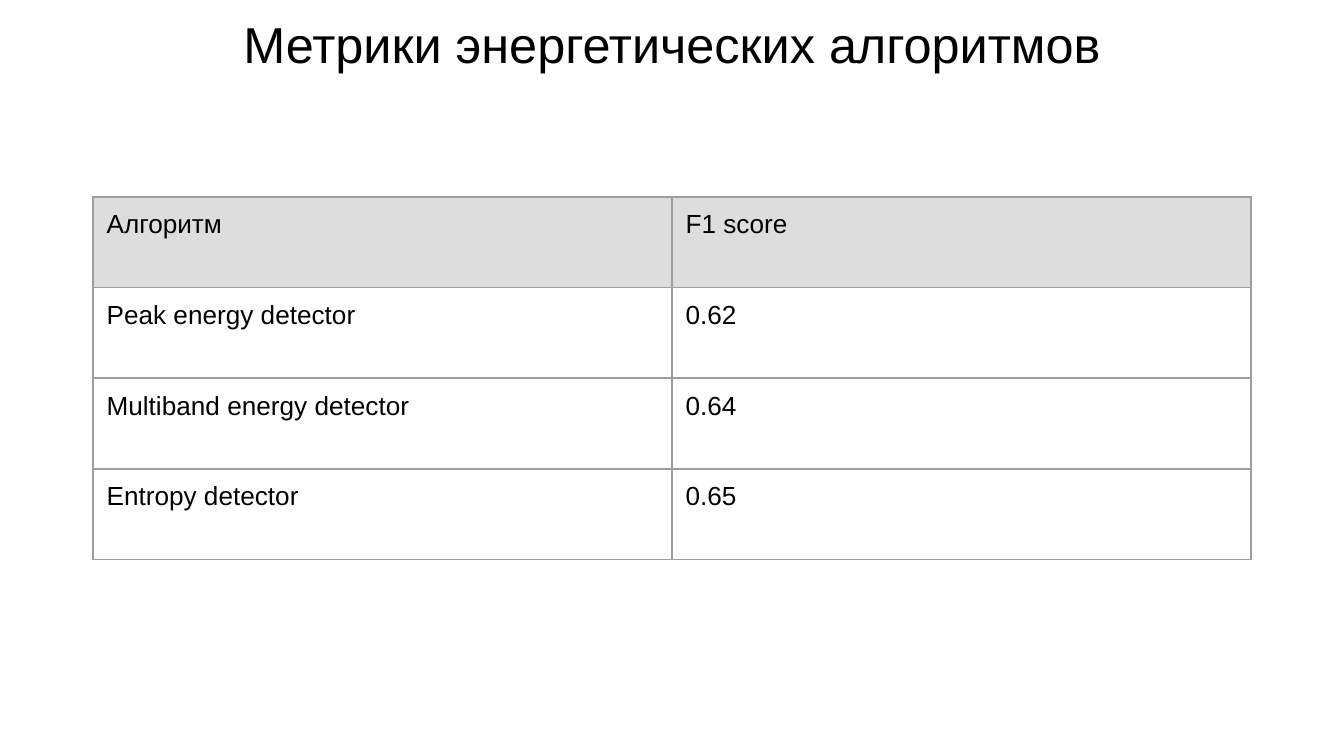
from pptx import Presentation
from pptx.dml.color import RGBColor
from pptx.enum.text import MSO_ANCHOR, PP_ALIGN
from pptx.oxml import parse_xml
from pptx.oxml.ns import nsdecls
from pptx.util import Pt

BLACK = RGBColor(0x00, 0x00, 0x00)
HEADER = RGBColor(0xDD, 0xDD, 0xDD)
BORDER = RGBColor(0x9E, 0x9E, 0x9E)
FONT = "Arial"
INSET = Pt(7.2)


def add_run(p, text, size):
    r = p.add_run()
    r.text = text
    r.font.name = FONT
    r.font.size = Pt(size)
    r.font.color.rgb = BLACK


def set_borders(cell):
    tcPr = cell._tc.get_or_add_tcPr()
    for i, side in enumerate(("lnL", "lnR", "lnT", "lnB")):
        tcPr.insert(i, parse_xml(
            f'<a:{side} {nsdecls("a")} w="{Pt(1)}"><a:solidFill>'
            f'<a:srgbClr val="{BORDER}"/></a:solidFill></a:{side}>'))


prs = Presentation()
prs.slide_width, prs.slide_height = Pt(720), Pt(405)
s = prs.slides.add_slide(prs.slide_layouts[6])

# Title
tf = s.shapes.add_textbox(Pt(24.5), Pt(0), Pt(671), Pt(45.4)).text_frame
tf.word_wrap = True
tf.vertical_anchor = MSO_ANCHOR.TOP
tf.margin_left = tf.margin_right = tf.margin_top = tf.margin_bottom = INSET
p = tf.paragraphs[0]
p.alignment = PP_ALIGN.CENTER
add_run(p, "Метрики энергетических алгоритмов", 27)

# Table of scores
rows = [
    ("Алгоритм", "F1 score"),
    ("Peak energy detector", "0.62"),
    ("Multiband energy detector", "0.64"),
    ("Entropy detector", "0.65"),
]
col_w, row_h = Pt(310.2), Pt(48.6)
table = s.shapes.add_table(len(rows), 2, Pt(49.9), Pt(105.4),
                           2 * col_w, len(rows) * row_h).table
for col in table.columns:
    col.width = col_w
for i, row in enumerate(rows):
    table.rows[i].height = row_h
    for j, text in enumerate(row):
        cell = table.cell(i, j)
        cell.margin_left = cell.margin_right = INSET
        cell.margin_top = cell.margin_bottom = INSET
        if i == 0:
            cell.fill.solid()
            cell.fill.fore_color.rgb = HEADER
        else:
            cell.fill.background()
        set_borders(cell)
        add_run(cell.text_frame.paragraphs[0], text, 14)

prs.save("out.pptx")
